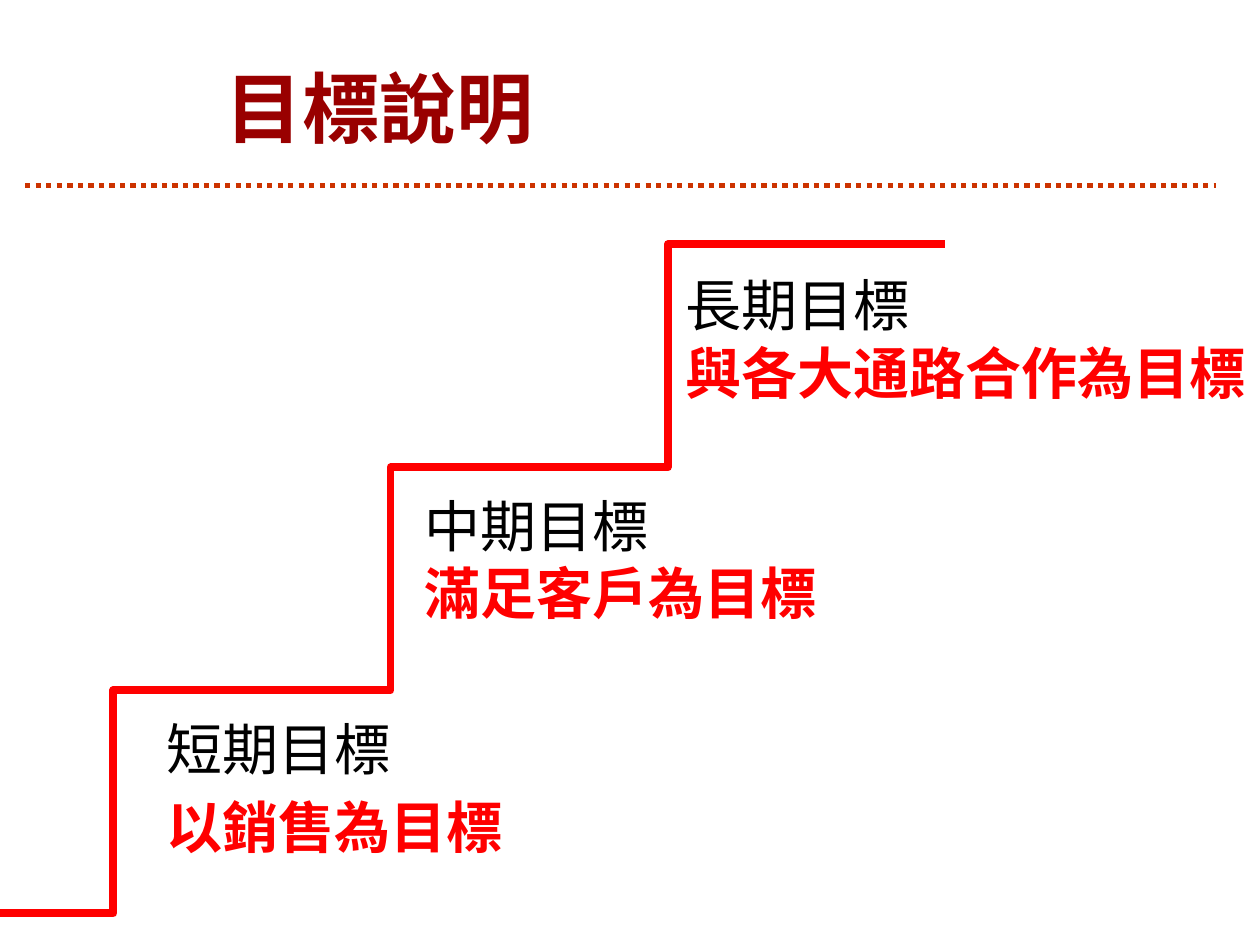
from lxml.etree import SubElement
from pptx import Presentation
from pptx.dml.color import RGBColor
from pptx.enum.dml import MSO_LINE
from pptx.enum.shapes import MSO_CONNECTOR
from pptx.enum.text import MSO_ANCHOR
from pptx.oxml.ns import qn
from pptx.util import Inches, Pt

FONT = "Noto Sans CJK SC"
RED = "FF0000"
RUN, RISE = 2.2, 1.77


def rgb(value):
    """Turn a hex string into a colour."""
    return RGBColor.from_string(value)


def add_line(s, kind, start, end, color, width):
    """Add a plain connector without a shadow."""
    ends = [Inches(v) for v in (*start, *end)]
    cxn = s.shapes.add_connector(kind, *ends)
    cxn.line.color.rgb = rgb(color)
    cxn.line.width = Pt(width)
    SubElement(cxn._element.spPr, qn("a:effectLst"))
    return cxn


def style(p, size, color, bold):
    """Set the font of a paragraph for Latin and East Asian text."""
    p.font.size = Pt(size)
    p.font.bold = bold
    p.font.color.rgb = rgb(color)
    p.font.name = FONT
    SubElement(p._p.pPr.find(qn("a:defRPr")), qn("a:ea"), typeface=FONT)


def add_text(s, box, lines, size, wrap=True, gap=0, anchor=MSO_ANCHOR.TOP):
    """Add a text box with one paragraph per (text, color, bold) line."""
    tf = s.shapes.add_textbox(*[Inches(v) for v in box]).text_frame
    tf.word_wrap = wrap
    tf.vertical_anchor = anchor
    for i, (text, color, bold) in enumerate(lines):
        p = tf.add_paragraph() if i else tf.paragraphs[0]
        p.text = text
        if i and gap:
            p.space_before = Pt(gap)
        style(p, size, color, bold)


def add_goal(s, box, term, goal, **options):
    """Add a term heading with its goal in red beneath."""
    lines = [(term, "000000", False), (goal, RED, True)]
    add_text(s, box, lines, 32, **options)


def add_stairs(s, left, bottom, count):
    """Add overlapping elbow connectors that climb to the right."""
    for i in range(count):
        x, y = left + i * RUN, bottom - i * RISE
        add_line(s, MSO_CONNECTOR.ELBOW, (x, y), (x + 2 * RUN, y - RISE), RED, 4.5)


def main():
    """Build the goals slide."""
    prs = Presentation()
    prs.slide_width, prs.slide_height = Inches(10), Inches(7.5)
    s = prs.slides.add_slide(prs.slide_layouts[6])
    rule = add_line(s, MSO_CONNECTOR.STRAIGHT, (0.2, 1.47), (9.65, 1.47), "CC3300", 3)
    rule.line.dash_style = MSO_LINE.ROUND_DOT
    add_text(s, (1.69, 0.22, 7.65, 1.25), [("目標說明", "990000", True)], 44,
             anchor=MSO_ANCHOR.MIDDLE)
    add_goal(s, (1.22, 5.62, 3.15, 1.5), "短期目標", "以銷售為目標", gap=6.4)
    add_goal(s, (3.27, 3.85, 4.41, 1.18), "中期目標", "滿足客戶為目標")
    add_goal(s, (5.34, 2.1, 4.69, 1.18), "長期目標", "與各大通路合作為目標", wrap=False)
    add_stairs(s, -1.3, 7.25, 3)
    prs.save("out.pptx")


if __name__ == "__main__":
    main()
